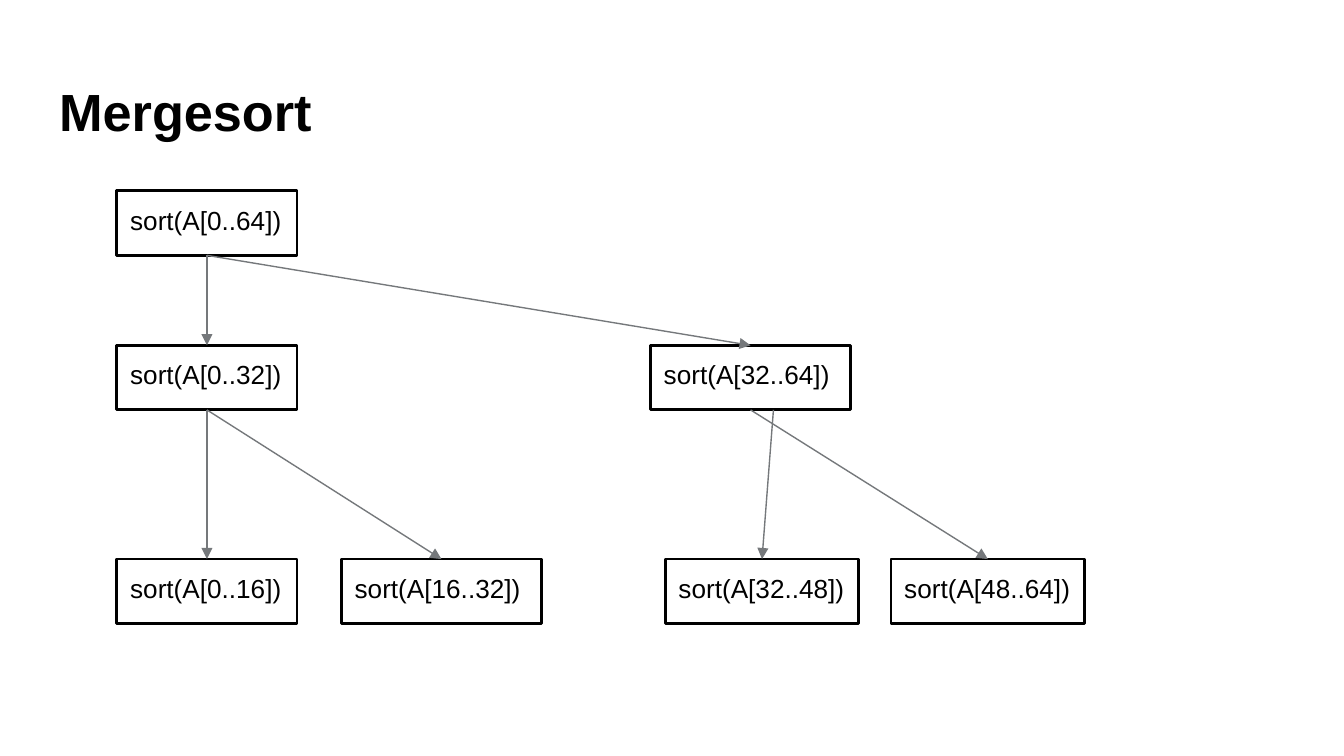
from pptx import Presentation
from pptx.dml.color import RGBColor
from pptx.enum.shapes import MSO_CONNECTOR as Connector, MSO_SHAPE as Shape
from pptx.enum.text import MSO_ANCHOR as Anchor, MSO_AUTO_SIZE as AutoSize, PP_ALIGN as Align
from pptx.oxml.ns import qn
from pptx.util import Inches, Pt
from lxml.etree import SubElement

WIDTH = 10
HEIGHT = WIDTH * 9 / 16
BLACK, GRAY = "000000", "75787B"
BOX_HEIGHT = 0.48
ROWS = [1.42, 2.57, 4.16]
CALLS = {
    "0..64": (0, 0.87, 1.34),
    "0..32": (1, 0.87, 1.34),
    "32..64": (1, 4.84, 1.49),
    "0..16": (2, 0.87, 1.34),
    "16..32": (2, 2.54, 1.49),
    "32..48": (2, 4.95, 1.44),
    "48..64": (2, 6.63, 1.44),
}
BRANCHES = [
    ("0..64", "0..32", 0),
    ("0..64", "32..64", 0),
    ("0..32", "0..16", 0),
    ("0..32", "16..32", 0),
    ("32..64", "32..48", 0.17),
    ("32..64", "48..64", 0),
]


def color(value):
    return RGBColor.from_string(value)


def write(shape, text, size, bold=False):
    frame = shape.text_frame
    frame.word_wrap = True
    frame.auto_size = AutoSize.NONE
    frame.vertical_anchor = Anchor.TOP
    frame.margin_left = frame.margin_right = Inches(0.1)
    frame.margin_top = frame.margin_bottom = Inches(0.1)
    paragraph = frame.paragraphs[0]
    paragraph.alignment = Align.LEFT
    run = paragraph.add_run()
    run.text = text
    run.font.name = "Arial"
    run.font.size = Pt(size)
    run.font.bold = bold
    run.font.color.rgb = color(BLACK)


def place_title(slide, left, top, width, height):
    title = slide.shapes.title
    title.left, title.top = Inches(left), Inches(top)
    title.width, title.height = Inches(width), Inches(height)
    write(title, "Mergesort", 28, bold=True)


def add_call(slide, text, left, top, width, height):
    shape = slide.shapes.add_shape(
        Shape.RECTANGLE, Inches(left), Inches(top), Inches(width), Inches(height)
    )
    shape.shadow.inherit = False
    shape.fill.background()
    shape.line.color.rgb = color(BLACK)
    shape.line.width = Pt(1.5)
    write(shape, text, 14)


def add_arrow(slide, start, end):
    arrow = slide.shapes.add_connector(
        Connector.STRAIGHT, *[Inches(value) for value in (*start, *end)]
    )
    arrow.line.color.rgb = color(GRAY)
    arrow.line.width = Pt(0.75)
    SubElement(arrow.line._get_or_add_ln(), qn("a:tailEnd"), type="triangle")
    SubElement(arrow._element.spPr, qn("a:effectLst"))


def add_call_tree(slide, left, top):
    boxes = {
        bounds: (left + x - 0.87, top + ROWS[row] - ROWS[0], width)
        for bounds, (row, x, width) in CALLS.items()
    }
    for bounds, (x, y, width) in boxes.items():
        add_call(slide, f"sort(A[{bounds}])", x, y, width, BOX_HEIGHT)
    for parent, child, shift in BRANCHES:
        parent_x, parent_y, parent_width = boxes[parent]
        child_x, child_y, child_width = boxes[child]
        start = (parent_x + parent_width / 2 + shift, parent_y + BOX_HEIGHT)
        add_arrow(slide, start, (child_x + child_width / 2, child_y))


def main():
    presentation = Presentation()
    presentation.slide_width = Inches(WIDTH)
    presentation.slide_height = Inches(HEIGHT)
    slide = presentation.slides.add_slide(presentation.slide_layouts[5])
    place_title(slide, 0.34, 0.49, 9.32, 0.63)
    add_call_tree(slide, 0.87, ROWS[0])
    presentation.save("out.pptx")


if __name__ == "__main__":
    main()
